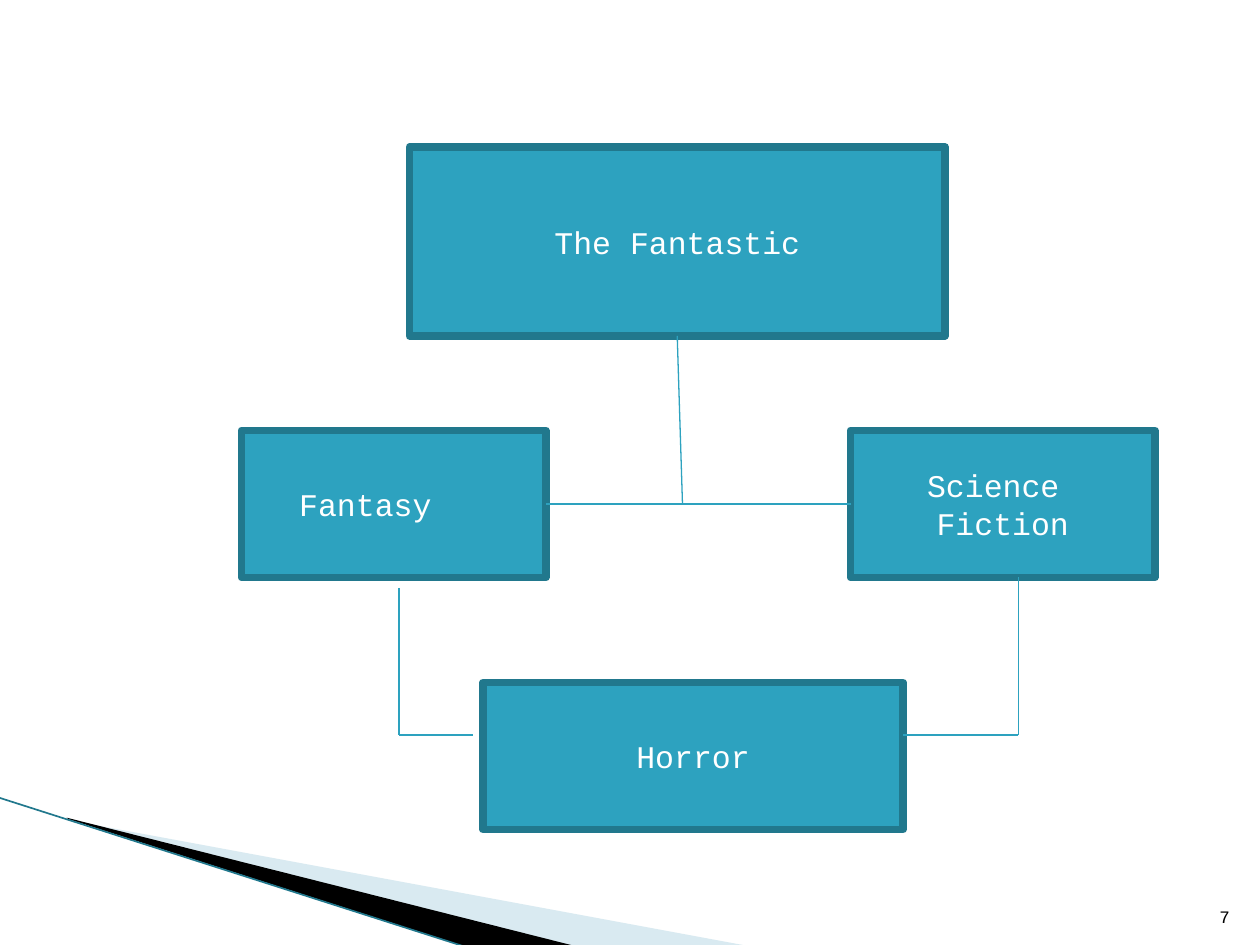
import pptx
import pptx.dml.color
import pptx.enum.shapes
import pptx.enum.text
import pptx.oxml.ns
import pptx.util
from lxml import etree

THEME = {
    "font": "Courier New", "label_size": 18, "number_size": 10,
    "box": "2DA2BF", "box_edge": "21788D", "link": "2DA2BF",
    "label": "FFFFFF", "number": "000000",
    "pale_wedge": "A0CBDC", "dark_wedge": "000000", "sweep": "21788D",
    "edge_width": 4.33, "link_width": 0.75, "sweep_width": 0.95,
}
CELL = pptx.util.Inches(1) / 12  # the slide is a grid of 120 columns by 90 rows
TOP, LEFT, BOTTOM, RIGHT = range(4)
ALIGN = pptx.enum.text.PP_ALIGN
ANCHOR = pptx.enum.text.MSO_ANCHOR


def cells(*counts):
    return [pptx.util.Emu(round(count * CELL)) for count in counts]


def color(name):
    return pptx.dml.color.RGBColor.from_string(THEME[name])


def set_all(target, values):
    for key, value in values.items():
        setattr(target, key, value)


def paint(shape, fill):
    shape.shadow.inherit = False
    shape.fill.solid()
    shape.fill.fore_color.rgb = color(fill)


def write(shape, text, role, align, anchor):
    frame = shape.text_frame
    set_all(frame, {"word_wrap": True, "vertical_anchor": anchor})
    paragraph = frame.paragraphs[0]
    paragraph.text = text
    paragraph.alignment = align
    for run in paragraph.runs:
        set_all(run.font, {"name": THEME["font"],
                           "size": pptx.util.Pt(THEME[role + "_size"])})
        run.font.color.rgb = color(role)


def add_genre(slide, text, column, row, columns, rows=14):
    box = slide.shapes.add_shape(pptx.enum.shapes.MSO_SHAPE.RECTANGLE,
                                 *cells(column, row, columns, rows))
    paint(box, "box")
    box.line.color.rgb = color("box_edge")
    box.line.width = pptx.util.Pt(THEME["edge_width"])
    write(box, text, "label", ALIGN.CENTER, ANCHOR.MIDDLE)
    return box


def add_line(slide, start, end, role="link"):
    line = slide.shapes.add_connector(pptx.enum.shapes.MSO_CONNECTOR.STRAIGHT,
                                      *cells(*start, *end))
    line.line.color.rgb = color(role)
    line.line.width = pptx.util.Pt(THEME[role + "_width"])
    etree.SubElement(line._element.spPr, pptx.oxml.ns.qn("a:effectLst"))
    return line


def add_wedge(slide, points, fill, opacity=100):
    """Points are in hundredths of an inch."""
    builder = slide.shapes.build_freeform(*points[0],
                                          scale=pptx.util.Inches(1) / 100)
    builder.add_line_segments(points[1:], close=True)
    wedge = builder.convert_to_shape()
    paint(wedge, fill)
    wedge.line.fill.background()
    if opacity < 100:
        tint = wedge._element.spPr.find(".//" + pptx.oxml.ns.qn("a:srgbClr"))
        etree.SubElement(tint, pptx.oxml.ns.qn("a:alpha"),
                         val=str(opacity * 1000))


def add_corner(slide):
    add_wedge(slide, [(55, 651), (595, 751), (456, 751), (55, 650)],
              "pale_wedge", opacity=40)
    add_wedge(slide, [(53, 649), (457, 751), (372, 752), (54, 650)],
              "dark_wedge")
    add_line(slide, (-0.12, 75.96), (44.52, 90.24), "sweep")


def add_number(slide, text):
    box = slide.shapes.add_textbox(*cells(113.5, 84.1, 4.8, 4.8))
    write(box, text, "number", ALIGN.RIGHT, ANCHOR.BOTTOM)


def main():
    deck = pptx.Presentation()
    set_all(deck, dict(zip(("slide_width", "slide_height"), cells(120, 90))))
    slide = deck.slides.add_slide(deck.slide_layouts[6])

    # Corner decoration and page number
    add_corner(slide)
    add_number(slide, "7")

    # Genres
    fantastic = add_genre(slide, "The Fantastic", 39, 14, 51, 18)
    science_fiction = add_genre(slide, "Science \vFiction", 81, 41, 29)
    fantasy = add_genre(slide, "Fantasy\t", 23, 41, 29)
    add_genre(slide, "Horror", 46, 65, 40)

    # Links that meet between the three upper genres
    junction = (65, 48)
    for genre, side, start in ((fantastic, BOTTOM, (64.5, 32)),
                               (fantasy, RIGHT, (52, 48)),
                               (science_fiction, LEFT, (81, 48))):
        add_line(slide, start, junction).begin_connect(genre, side)

    # Elbows down to Horror
    for start, corner, end in (((38, 56), (38, 70), (45, 70)),
                               ((97, 55), (97, 70), (86, 70))):
        add_line(slide, start, corner)
        add_line(slide, corner, end)

    deck.save("out.pptx")


if __name__ == "__main__":
    main()
